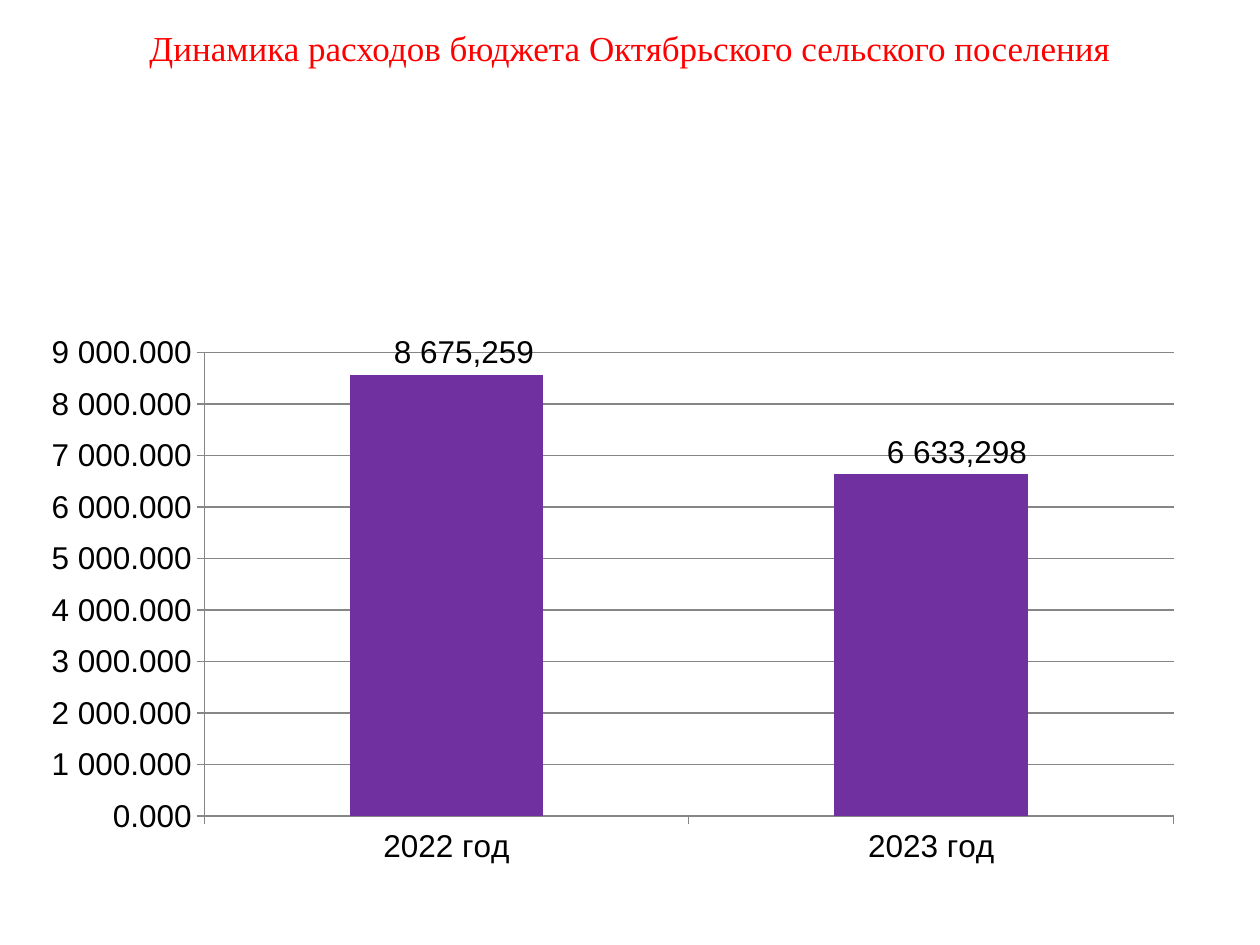
from dataclasses import dataclass

import pptx
import pptx.chart.data
import pptx.dml.color
import pptx.enum.chart
import pptx.enum.text
import pptx.oxml
import pptx.oxml.ns
import pptx.util
from pptx.util import Inches


@dataclass
class YearSpending:
    year: str
    amount: float
    label: str
    label_shift: float


SPENDING = [
    YearSpending("2022 год", 8561.959, "8 675,259", 0.015),
    YearSpending("2023 год", 6633.298, "6 633,298", 0.022),
]


def color(value: str) -> pptx.dml.color.RGBColor:
    return pptx.dml.color.RGBColor.from_string(value)


def set_font(font, name: str, size: float, hex_color: str) -> None:
    font.name = name
    font.size = pptx.util.Pt(size)
    font.bold = False
    font.color.rgb = color(hex_color)


def manual_layout(**settings):
    """Return a c:layout element; settings are its children in schema order."""
    children = "".join(f'<c:{key} val="{value}"/>' for key, value in settings.items())
    return pptx.oxml.parse_xml(
        f'<c:layout {pptx.oxml.ns.nsdecls("c")}>'
        f"<c:manualLayout>{children}</c:manualLayout></c:layout>"
    )


def add_title(slide) -> None:
    title = slide.shapes.title
    title.left, title.top = Inches(0.5), Inches(0.16)
    title.width, title.height = Inches(9), Inches(1.09)
    frame = title.text_frame
    frame.text = "Динамика расходов бюджета Октябрьского сельского поселения"
    frame.word_wrap = True
    frame.vertical_anchor = pptx.enum.text.MSO_ANCHOR.TOP
    paragraph = frame.paragraphs[0]
    paragraph.alignment = pptx.enum.text.PP_ALIGN.CENTER
    set_font(paragraph.runs[0].font, "Times New Roman", 20, "FF0000")


def format_axes(chart) -> None:
    for axis in (chart.category_axis, chart.value_axis):
        axis.major_tick_mark = pptx.enum.chart.XL_TICK_MARK.OUTSIDE
        axis.minor_tick_mark = pptx.enum.chart.XL_TICK_MARK.NONE
        axis.format.line.color.rgb = color("868686")
        axis.format.line.width = pptx.util.Pt(0.75)
    chart.category_axis.has_major_gridlines = False
    value_axis = chart.value_axis
    value_axis.minimum_scale, value_axis.maximum_scale = 0, 9000
    value_axis.major_unit = 1000
    value_axis.tick_labels.number_format = r"#\ ##0.000"
    value_axis.tick_labels.number_format_is_linked = False
    value_axis.has_major_gridlines = True
    gridline = value_axis.major_gridlines.format.line
    gridline.color.rgb = color("868686")
    gridline.width = pptx.util.Pt(0.75)


def add_bar_label(point, spending: YearSpending) -> None:
    label = point.data_label
    label.text_frame.text = spending.label
    set_font(label.text_frame.paragraphs[0].runs[0].font, "Arial", 18, "000000")
    label.position = pptx.enum.chart.XL_LABEL_POSITION.OUTSIDE_END
    label_element = label.text_frame._txBody.getparent().getparent()
    index = label_element.find(pptx.oxml.ns.qn("c:idx"))
    index.addnext(manual_layout(x=spending.label_shift, y=0))


def add_spending_chart(slide) -> None:
    data = pptx.chart.data.CategoryChartData()
    data.categories = [spending.year for spending in SPENDING]
    data.add_series("Series 1", [spending.amount for spending in SPENDING])
    chart = slide.shapes.add_chart(
        pptx.enum.chart.XL_CHART_TYPE.COLUMN_CLUSTERED,
        Inches(0.23), Inches(2.58), Inches(9.27), Inches(4.38), data,
    ).chart
    chart.has_legend = False
    chart.has_title = False
    set_font(chart.font, "Arial", 18, "000000")
    format_axes(chart)

    plot = chart.plots[0]
    plot.gap_width = 150
    plot.vary_by_categories = False
    series = plot.series[0]
    series.format.fill.solid()
    series.format.fill.fore_color.rgb = color("7030A0")
    series.data_labels.show_value = True
    for position, spending in enumerate(SPENDING):
        add_bar_label(series.points[position], spending)

    plot_area = chart._chartSpace.chart.plotArea
    for layout in plot_area.findall(pptx.oxml.ns.qn("c:layout")):
        plot_area.remove(layout)
    plot_area.insert(0, manual_layout(
        layoutTarget="inner", xMode="edge", yMode="edge",
        x=0.15, y=0.05, w=0.83, h=0.84))


def main() -> None:
    presentation = pptx.Presentation()
    presentation.slide_width = Inches(10)
    presentation.slide_height = Inches(7.5)
    slide = presentation.slides.add_slide(presentation.slide_layouts[5])
    slide.background.fill.solid()
    slide.background.fill.fore_color.rgb = color("FFFFFF")
    add_title(slide)
    add_spending_chart(slide)
    presentation.save("out.pptx")


if __name__ == "__main__":
    main()
